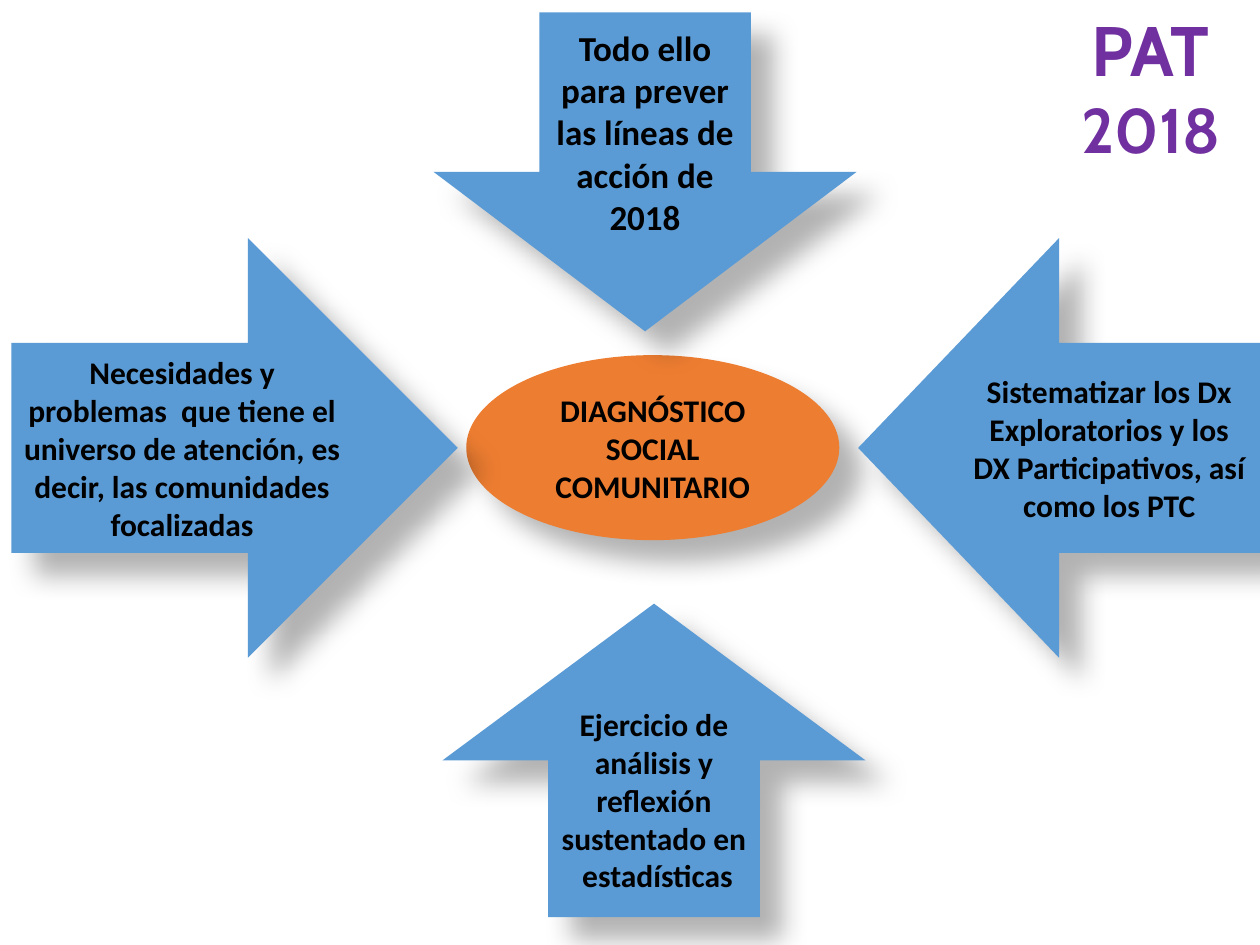
from lxml import etree
from pptx import Presentation
from pptx.dml.color import RGBColor
from pptx.enum.shapes import MSO_SHAPE
from pptx.enum.text import MSO_ANCHOR, PP_ALIGN
from pptx.oxml.ns import qn
from pptx.util import Cm, Pt

OVAL = MSO_SHAPE.OVAL
RIGHT, LEFT = MSO_SHAPE.RIGHT_ARROW, MSO_SHAPE.LEFT_ARROW
UP, DOWN = MSO_SHAPE.UP_ARROW, MSO_SHAPE.DOWN_ARROW
MIDDLE, CENTER = MSO_ANCHOR.MIDDLE, PP_ALIGN.CENTER

THEME = {
    "arrow": "5B9BD5", "core": "ED7D31", "text": "000000", "title": "7030A0",
    "shadow": "000000", "body_font": "Calibri", "title_font": "Cabin",
    "body": 18, "large": 20, "title_sizes": (40, 36),
}

TITLE = ("PAT", " 2018")
TITLE_BOX = (21, 0, 4.4, 3.51)

IDEAS = [
    (OVAL, "core", "body", (9.4, 7.16, 7.52, 3.73),
     "DIAGNÓSTICO SOCIAL COMUNITARIO"),
    (RIGHT, "arrow", "body", (0.23, 4.8, 9, 8.46),
     "Necesidades y problemas  que tiene el universo de atención, "
     "es decir, las comunidades focalizadas"),
    (LEFT, "arrow", "body", (17.3, 4.8, 8.1, 8.46),
     "Sistematizar los Dx Exploratorios y los DX Participativos, así como los PTC"),
    (UP, "arrow", "body", (8.92, 12.17, 8.53, 6.32),
     "Ejercicio de análisis y reflexión sustentado en  estadísticas"),
    (DOWN, "arrow", "large", (8.74, 0.25, 8.53, 6.43),
     "Todo ello para prever las líneas de acción de 2018"),
]


def color(name):
    return RGBColor.from_string(THEME[name])


def cast_shadow(shape):
    shape.shadow.inherit = False
    effects = shape._element.spPr.find(qn("a:effectLst"))
    shadow = etree.SubElement(
        effects, qn("a:outerShdw"), blurRad=str(Pt(15)), dist=str(Pt(18)),
        dir="2700000", algn="tl", rotWithShape="0")
    tint = etree.SubElement(shadow, qn("a:srgbClr"), val=THEME["shadow"])
    etree.SubElement(tint, qn("a:alpha"), val="30000")


def add_idea(slide, preset, fill, size, box, wording):
    idea = slide.shapes.add_shape(preset, *map(Cm, box))
    idea.fill.solid()
    idea.fill.fore_color.rgb = color(fill)
    idea.line.fill.background()
    cast_shadow(idea)
    frame = idea.text_frame
    frame.word_wrap = True
    frame.vertical_anchor = MIDDLE
    paragraph = frame.paragraphs[0]
    paragraph.text = wording
    paragraph.alignment = CENTER
    paragraph.font.name = THEME["body_font"]
    paragraph.font.size = Pt(THEME[size])
    paragraph.font.bold = True
    paragraph.font.color.rgb = color("text")


def add_title(slide):
    frame = slide.shapes.add_textbox(*map(Cm, TITLE_BOX)).text_frame
    frame.word_wrap = True
    paragraph = frame.paragraphs[0]
    paragraph.alignment = CENTER
    paragraph.font.name = THEME["title_font"]
    paragraph.font.bold = True
    paragraph.font.color.rgb = color("title")
    for wording, size in zip(TITLE, THEME["title_sizes"]):
        run = paragraph.add_run()
        run.text = wording
        run.font.size = Pt(size)


def main():
    deck = Presentation()
    deck.slide_width, deck.slide_height = Cm(25.4), Cm(19.05)
    slide = deck.slides.add_slide(deck.slide_layouts[6])
    add_title(slide)
    for idea in IDEAS:
        add_idea(slide, *idea)
    deck.save("out.pptx")


if __name__ == "__main__":
    main()
